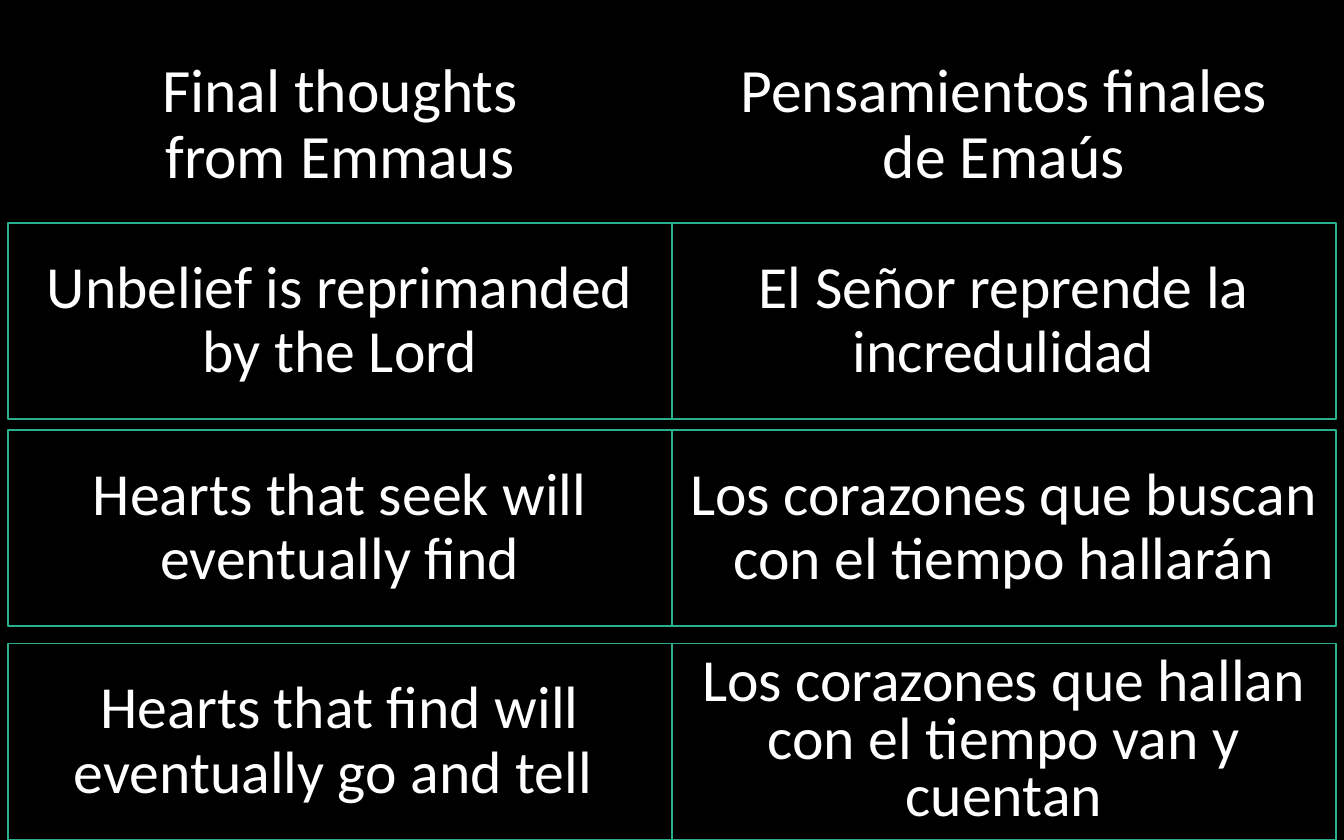
from dataclasses import dataclass

from pptx import Presentation
from pptx.dml.color import RGBColor
from pptx.enum.shapes import MSO_SHAPE as Shape
from pptx.enum.text import MSO_ANCHOR as Anchor, PP_ALIGN as Align
from pptx.slide import Slide
from pptx.text.text import TextFrame
from pptx.util import Inches, Pt


@dataclass(frozen=True)
class Theme:
    font: str = "Calibri"
    background: RGBColor = RGBColor(0, 0, 0)
    text: RGBColor = RGBColor(255, 255, 255)
    border: RGBColor = RGBColor(0x29, 0xAF, 0x8C)
    border_width: float = 0.75
    heading_size: int = 33
    thought_size: int = 32
    thought_space: float = 7.5


@dataclass(frozen=True)
class Heading:
    text: str
    left: float


@dataclass(frozen=True)
class Thought:
    text: str
    row: int
    column: int
    line_spacing: float = 0.9


THEME = Theme()
HEADING_TOP, HEADING_WIDTH, HEADING_HEIGHT = 0.33, 5.06, 1.21
ROW_TOPS = (1.66, 3.2, 4.79)
GRID_LEFT, CELL_WIDTH, CELL_HEIGHT = 0.06, 4.94, 1.46

HEADINGS = (
    Heading("Final thoughts\vfrom Emmaus", 0),
    Heading("Pensamientos finales\vde Emaús", 10 - HEADING_WIDTH),
)
THOUGHTS = (
    Thought("Unbelief is reprimanded by the Lord", 0, 0),
    Thought("Hearts that seek will eventually find", 1, 0),
    Thought("Hearts that find will eventually go and tell ", 2, 0),
    Thought("El Señor reprende la incredulidad", 0, 1),
    Thought("Los corazones que buscan con el tiempo hallarán", 1, 1),
    Thought("Los corazones que hallan con el tiempo van y cuentan", 2, 1, 0.8),
)


def write_text(frame: TextFrame, text: str, size: float,
               line_spacing: float = 0.9, space_before: float = 0) -> None:
    frame.word_wrap = True
    frame.vertical_anchor = Anchor.MIDDLE
    para = frame.paragraphs[0]
    para.text = text
    para.alignment = Align.CENTER
    para.line_spacing = line_spacing
    para.space_before = Pt(space_before)
    para.font.name = THEME.font
    para.font.size = Pt(size)
    para.font.color.rgb = THEME.text


def draw_heading(page: Slide, heading: Heading) -> None:
    box = page.shapes.add_textbox(
        Inches(heading.left), Inches(HEADING_TOP),
        Inches(HEADING_WIDTH), Inches(HEADING_HEIGHT))
    write_text(box.text_frame, heading.text, THEME.heading_size)


def draw_thought(page: Slide, thought: Thought) -> None:
    box = page.shapes.add_shape(
        Shape.RECTANGLE,
        Inches(GRID_LEFT + thought.column * CELL_WIDTH),
        Inches(ROW_TOPS[thought.row]),
        Inches(CELL_WIDTH), Inches(CELL_HEIGHT))
    box.shadow.inherit = False
    box.fill.background()
    box.line.color.rgb = THEME.border
    box.line.width = Pt(THEME.border_width)
    write_text(box.text_frame, thought.text, THEME.thought_size,
               thought.line_spacing, THEME.thought_space)


def main() -> None:
    deck = Presentation()
    deck.slide_width, deck.slide_height = Inches(10), Inches(6.25)
    page = deck.slides.add_slide(deck.slide_layouts[6])
    page.background.fill.solid()
    page.background.fill.fore_color.rgb = THEME.background
    for heading in HEADINGS:
        draw_heading(page, heading)
    for thought in THOUGHTS:
        draw_thought(page, thought)
    deck.save("out.pptx")


if __name__ == "__main__":
    main()
